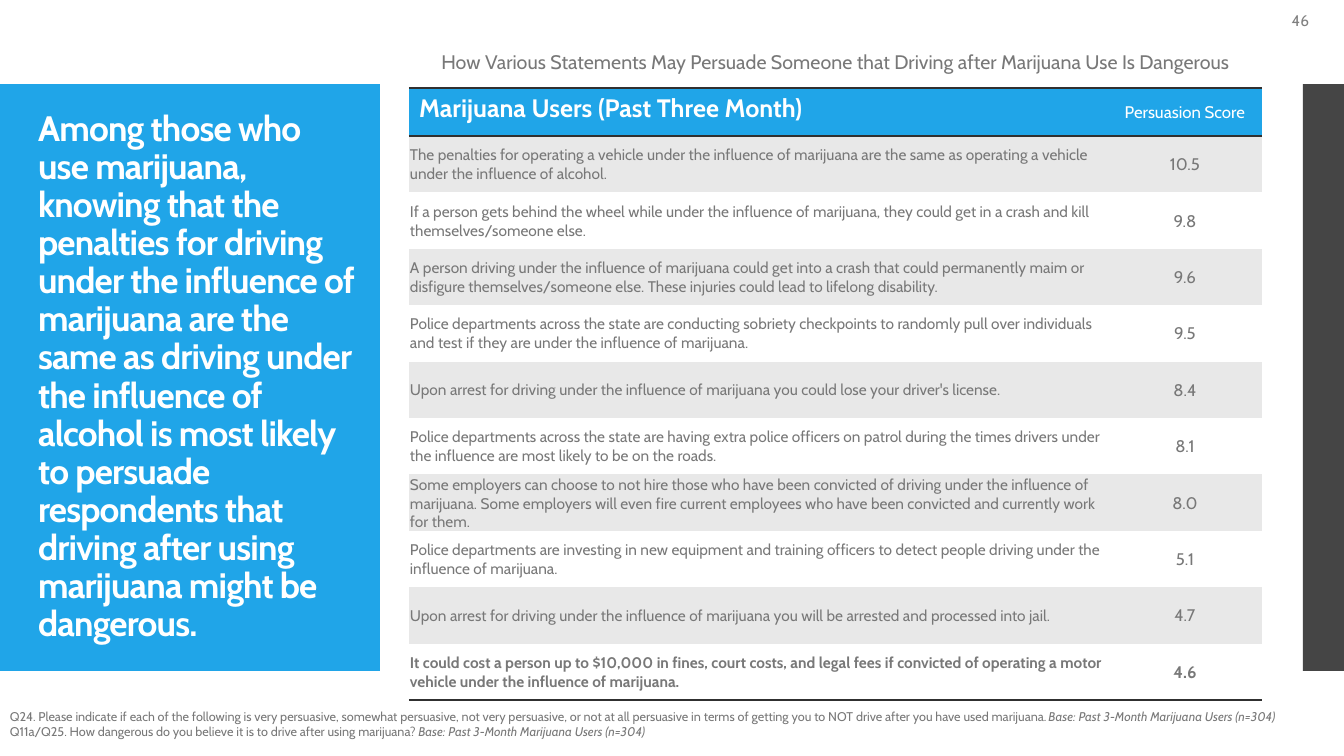
from lxml.etree import SubElement
from pptx import Presentation
from pptx.dml.color import RGBColor
from pptx.enum.shapes import MSO_SHAPE
from pptx.enum.text import MSO_ANCHOR as Anchor, MSO_AUTO_SIZE as AutoSize, PP_ALIGN as Align
from pptx.oxml.ns import qn
from pptx.util import Inches, Pt

HEADLINE = (
    "Among those who use marijuana, knowing that the penalties for driving under the influence of "
    "marijuana are the same as driving under the influence of alcohol is most likely to persuade "
    "respondents that driving after using marijuana might be dangerous."
)
PAGE_NUMBER = "46"
TABLE_TITLE = "How Various Statements May Persuade Someone that Driving after Marijuana Use Is Dangerous"
HEADER = ("Marijuana Users (Past Three Month)", "Persuasion Score")
STATEMENTS = [
    ("The penalties for operating a vehicle under the influence of marijuana are the same as "
     "operating a vehicle under the influence of alcohol.", "10.5"),
    ("If a person gets behind the wheel while under the influence of marijuana, they could get in "
     "a crash and kill themselves/someone else.", "9.8"),
    ("A person driving under the influence of marijuana could get into a crash that could "
     "permanently maim or disfigure themselves/someone else. These injuries could lead to "
     "lifelong disability.", "9.6"),
    ("Police departments across the state are conducting sobriety checkpoints to randomly pull "
     "over individuals and test if they are under the influence of marijuana.", "9.5"),
    ("Upon arrest for driving under the influence of marijuana you could lose your driver's "
     "license.", "8.4"),
    ("Police departments across the state are having extra police officers on patrol during the "
     "times drivers under the influence are most likely to be on the roads.", "8.1"),
    ("Some employers can choose to not hire those who have been convicted of driving under the "
     "influence of marijuana. Some employers will even fire current employees who have been "
     "convicted and currently work for them.", "8.0"),
    ("Police departments are investing in new equipment and training officers to detect people "
     "driving under the influence of marijuana.", "5.1"),
    ("Upon arrest for driving under the influence of marijuana you will be arrested and processed "
     "into jail.", "4.7"),
    ("It could cost a person up to $10,000 in fines, court costs, and legal fees if convicted of "
     "operating a motor vehicle under the influence of marijuana.", "4.6"),
]
BASE = "Base: Past 3-Month Marijuana Users (n=304)"
QUESTIONS = [
    "Q24. Please indicate if each of the following is very persuasive, somewhat persuasive, not "
    "very persuasive, or not at all persuasive in terms of getting you to NOT drive after you "
    "have used marijuana. ",
    "Q11a/Q25. How dangerous do you believe it is to drive after using marijuana? ",
]

FONT = "Cabin"
BLUE = RGBColor(0x20, 0xA5, 0xE8)
CHARCOAL = RGBColor(0x45, 0x45, 0x45)
RULE = RGBColor(0x30, 0x30, 0x30)
TEXT_GRAY = RGBColor(0x78, 0x78, 0x78)
NUMBER_GRAY = RGBColor(0x80, 0x80, 0x80)
BAND = RGBColor(0xE8, 0xE8, 0xE8)
WHITE = RGBColor(0xFF, 0xFF, 0xFF)

SLIDE_SIZE = (1344, 756)
PANELS = [((0, 84, 380, 587), BLUE), ((1303, 84, 42, 587), CHARCOAL)]
HEADLINE_BOX = (28, 124, 339, 507)
NUMBER_BOX = (1259, 4, 60, 33)
TABLE_TITLE_BOX = (398, 45, 875, 34)
NOTES_BOX = (0, 704, 1329, 56)
TABLE_BOX = (409, 88, 853, 612)
COLUMN_WIDTHS = (699, 154)
HEADER_HEIGHT = 48
NO_STYLE = "{2D5ABB26-0587-4C30-8999-92F81FD0307C}"


def px(length):
    return round(length * 914400 / 100.8)


def place(box):
    return [px(length) for length in box]


def style(paragraph, size, color, align=Align.LEFT, bold=False):
    paragraph.alignment = align
    font = paragraph.font
    font.name, font.size, font.bold = FONT, Pt(size), bold
    font.color.rgb = color


def add_text(slide, box, text, size, color, align=Align.LEFT, anchor=Anchor.TOP):
    frame = slide.shapes.add_textbox(*place(box)).text_frame
    frame.word_wrap = True
    frame.vertical_anchor = anchor
    frame.text = text
    style(frame.paragraphs[0], size, color, align)
    return frame


def add_rule(cell, side):
    line = SubElement(cell._tc.get_or_add_tcPr(), qn(f"a:{side}"), w=str(Pt(2)))
    fill = SubElement(line, qn("a:solidFill"))
    SubElement(fill, qn("a:srgbClr"), val=str(RULE))


def fill_cell(cell, text, fill, size, color, align, bold, rules, tight=True):
    for side in rules:
        add_rule(cell, side)
    cell.fill.solid()
    cell.fill.fore_color.rgb = fill
    if tight:
        cell.margin_left = cell.margin_right = cell.margin_top = Inches(0.01)
        cell.margin_bottom = 0
        cell.vertical_anchor = Anchor.MIDDLE
    cell.text = text
    style(cell.text_frame.paragraphs[0], size, color, align, bold)


def add_panels(slide):
    title = slide.shapes.title
    for box, color in PANELS:
        panel = slide.shapes.add_shape(MSO_SHAPE.RECTANGLE, *place(box))
        panel.shadow.inherit = False
        panel.fill.solid()
        panel.fill.fore_color.rgb = color
        panel.line.fill.background()
        title.element.addprevious(panel.element)


def add_headline(slide):
    title = slide.shapes.title
    title.left, title.top, title.width, title.height = place(HEADLINE_BOX)
    frame = title.text_frame
    frame.text = HEADLINE
    frame.word_wrap = True
    frame.auto_size = AutoSize.NONE
    frame.vertical_anchor = Anchor.MIDDLE
    paragraph = frame.paragraphs[0]
    paragraph.line_spacing = 0.9
    style(paragraph, 25.2, WHITE, bold=True)
    paragraph.runs[0].font._element.set("spc", "-60")


def add_score_table(slide):
    frame = slide.shapes.add_table(len(STATEMENTS) + 1, len(HEADER), *place(TABLE_BOX))
    table = frame.table
    table.first_row = table.horz_banding = False
    table._tbl.tblPr.find(qn("a:tableStyleId")).text = NO_STYLE
    for column, width in zip(table.columns, COLUMN_WIDTHS):
        column.width = px(width)
    row_height = (TABLE_BOX[3] - HEADER_HEIGHT) / len(STATEMENTS)
    for index, row in enumerate(table.rows):
        row.height = px(row_height if index else HEADER_HEIGHT)

    rules = ("lnT", "lnB")
    fill_cell(table.cell(0, 0), HEADER[0], BLUE, 18, WHITE, Align.LEFT, True, rules, tight=False)
    fill_cell(table.cell(0, 1), HEADER[1], BLUE, 12, WHITE, Align.CENTER, False, rules)
    for index, (statement, score) in enumerate(STATEMENTS, start=1):
        last = index == len(STATEMENTS)
        fill = BAND if index % 2 else WHITE
        rules = ("lnB",) if last else ()
        fill_cell(table.cell(index, 0), statement, fill, 11, TEXT_GRAY, Align.LEFT, last, rules)
        fill_cell(table.cell(index, 1), score, fill, 12, TEXT_GRAY, Align.CENTER, last, rules)


def add_notes(slide):
    frame = add_text(slide, NOTES_BOX, QUESTIONS[0], 9, TEXT_GRAY)
    second = frame.add_paragraph()
    second.text = QUESTIONS[1]
    style(second, 9, TEXT_GRAY)
    for paragraph in frame.paragraphs:
        base = paragraph.add_run()
        base.text = BASE
        base.font.italic = True


def main():
    presentation = Presentation()
    presentation.slide_width, presentation.slide_height = place(SLIDE_SIZE)
    slide = presentation.slides.add_slide(presentation.slide_layouts[5])
    add_panels(slide)
    add_headline(slide)
    add_text(slide, NUMBER_BOX, PAGE_NUMBER, 11, NUMBER_GRAY, Align.RIGHT, Anchor.MIDDLE)
    add_score_table(slide)
    add_notes(slide)
    add_text(slide, TABLE_TITLE_BOX, TABLE_TITLE, 14, TEXT_GRAY, Align.CENTER)
    presentation.save("out.pptx")


if __name__ == "__main__":
    main()
